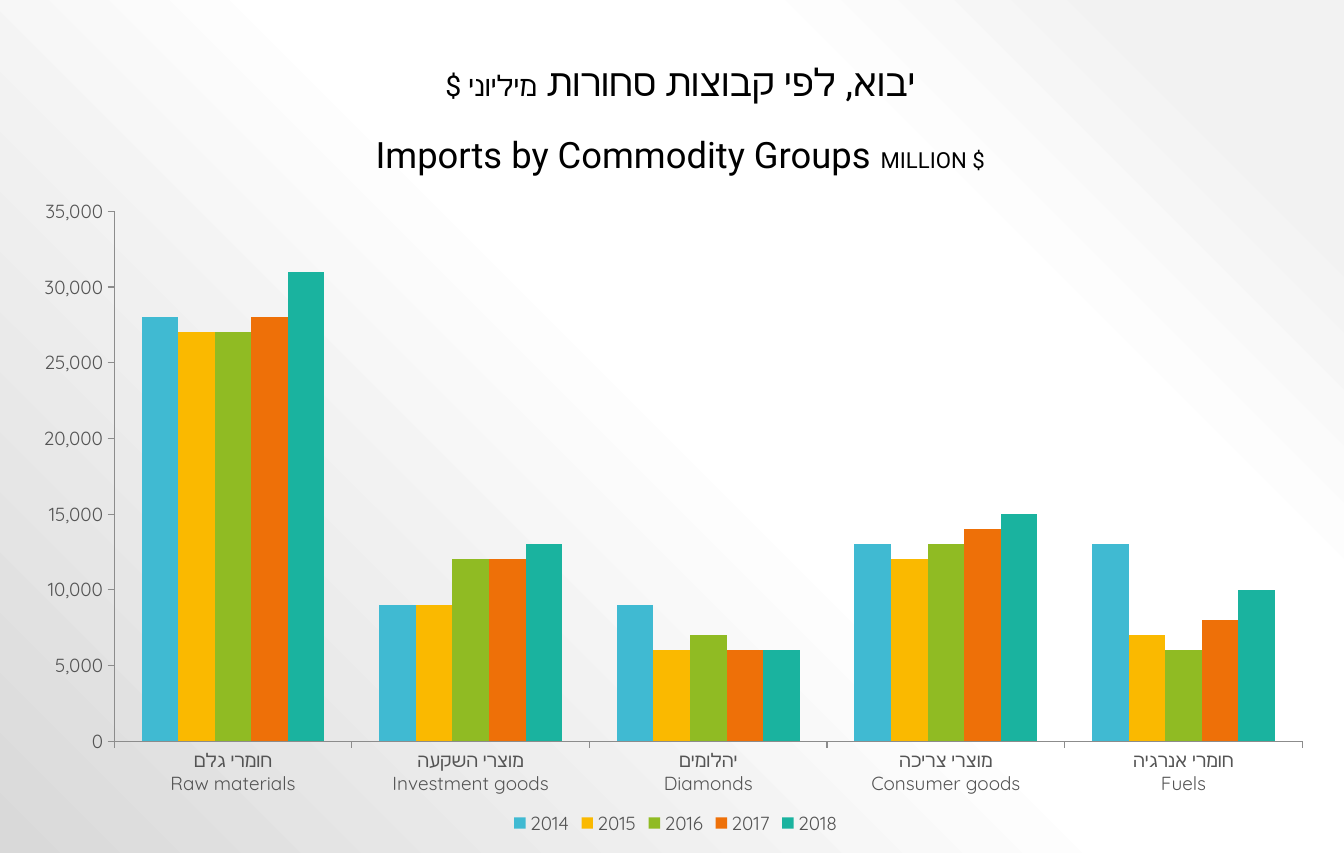
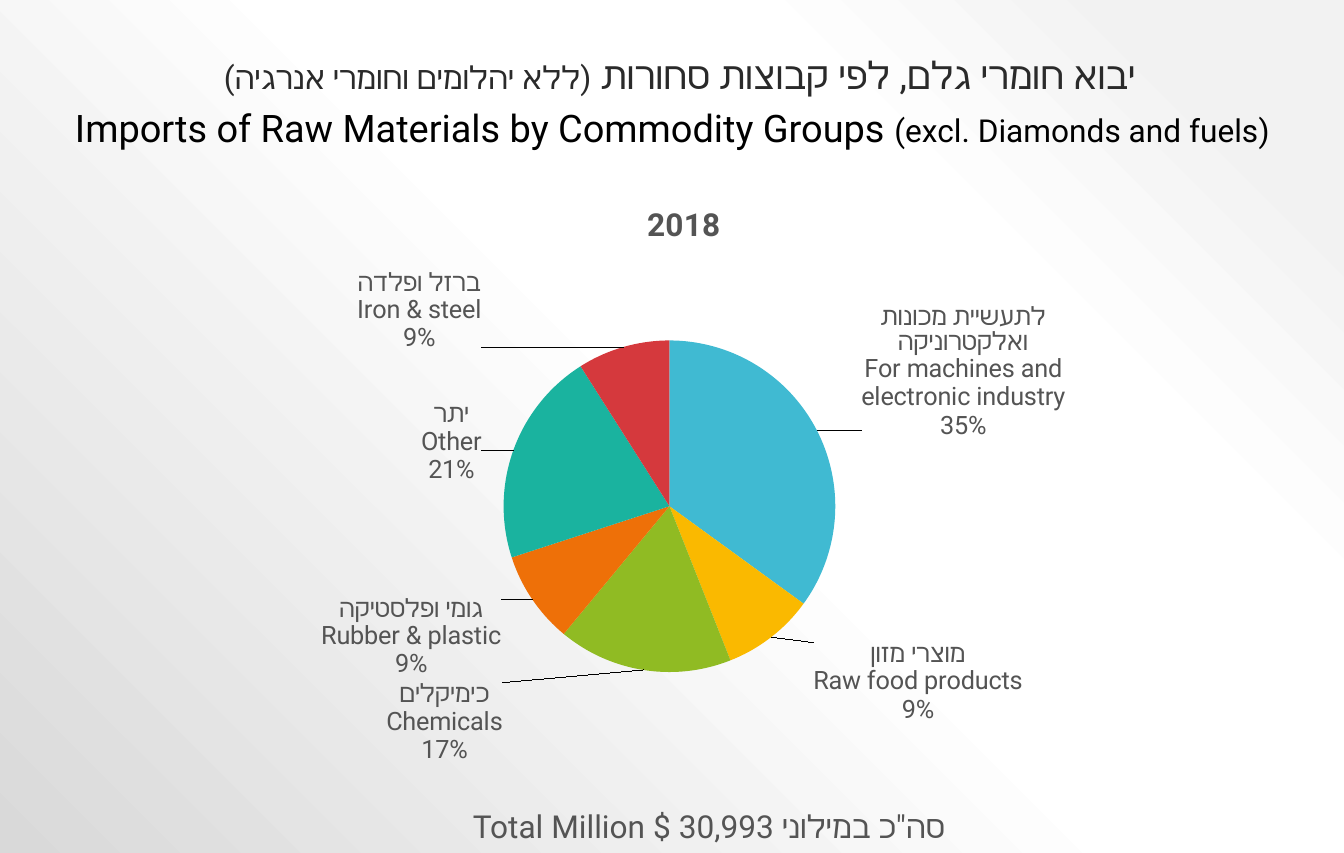
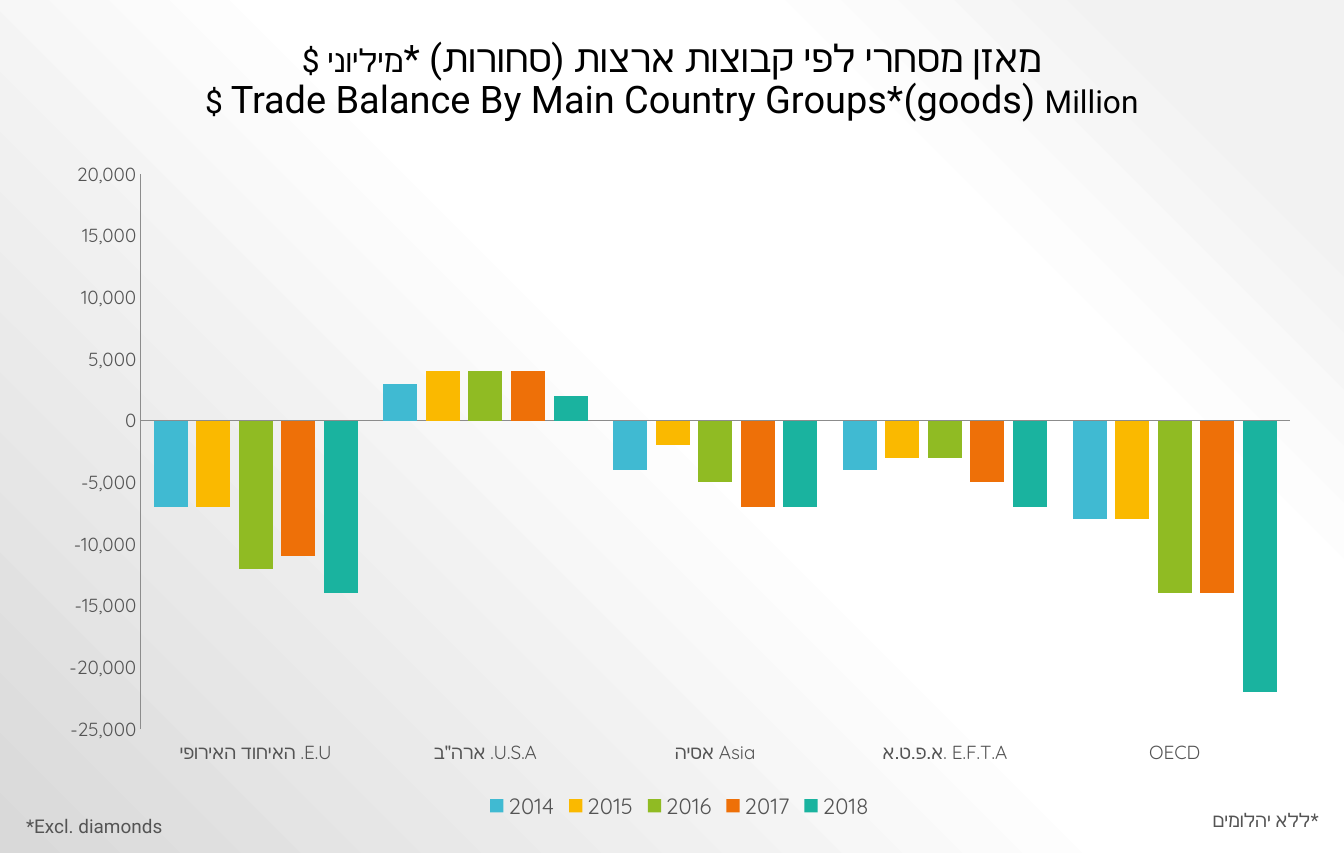
from dataclasses import dataclass

from pptx import Presentation
from pptx.chart.data import CategoryChartData
from pptx.dml.color import RGBColor
from pptx.enum.chart import XL_CHART_TYPE, XL_LEGEND_POSITION, XL_TICK_LABEL_POSITION, XL_TICK_MARK
from pptx.enum.text import MSO_ANCHOR, PP_ALIGN
from pptx.oxml import parse_xml
from pptx.oxml.ns import nsdecls, qn
from pptx.util import Pt


@dataclass(frozen=True)
class Theme:
    text_font: str = "Roboto"
    chart_font: str = "Quicksand"
    black: str = "000000"
    dark: str = "2A2A2A"
    gray: str = "545454"
    axis: str = "8C8C8C"
    accents: tuple = ("40BAD2", "FAB900", "90BB23", "EE7008", "1AB39F", "D5393D")
    background: tuple = ((10, "F2F2F2"), (28, "FFFFFF"), (48, "FFFFFF"), (100, "D9D9D9"))
    heading: int = 24
    subheading: int = 20
    label: int = 16
    small: int = 12


THEME = Theme()
SLIDE_WIDTH, SLIDE_HEIGHT = 850.5, 540
LINE_BREAK = "\v"

# Content: boxes are (left, top, width, height) in points, runs are (text, size)
YEARS = ("2014", "2015", "2016", "2017", "2018")

IMPORTS = {
    "title": [("יבוא, לפי קבוצות סחורות ", THEME.heading), ("מיליוני $", 18)],
    "title_box": (41, 9.4, 779, 60.5),
    "subtitle": [("Imports by Commodity Groups ", 23), ("MILLION $", 14)],
    "subtitle_box": (144, 83.5, 573, 33),
    "chart_box": (23, 111.6, 809.3, 419.8),
    "plot": (0.061, 0.053, 0.929, 0.799),
    "categories": ["חומרי גלם\nRaw materials", "מוצרי השקעה\nInvestment goods",
                   "יהלומים\nDiamonds", "מוצרי צריכה\nConsumer goods",
                   "חומרי אנרגיה\nFuels"],
    "values": [(28000, 9000, 9000, 13000, 13000), (27000, 9000, 6000, 12000, 7000),
               (27000, 12000, 7000, 13000, 6000), (28000, 12000, 6000, 14000, 8000),
               (31000, 13000, 6000, 15000, 10000)],
    "range": (0, 35000), "gap": 150, "overlap": 0,
    "tick": XL_TICK_MARK.OUTSIDE, "legend_size": THEME.small,
    "label_position": XL_TICK_LABEL_POSITION.NEXT_TO_AXIS,
}

RAW_MATERIALS = {
    "title": [("יבוא חומרי גלם, לפי קבוצות סחורות ", THEME.heading),
              ("(ללא יהלומים וחומרי אנרגיה)", THEME.subheading)],
    "title_box": (47.5, 26, 765.4, 39.6),
    "subtitle": [("Imports of Raw Materials by Commodity Groups ", THEME.heading),
                 ("(excl. Diamonds and fuels)", THEME.subheading)],
    "subtitle_box": (11.5, 62.6, 828, 36),
    "total": [("Total Million $ סה\"כ במילוני 30,993", THEME.subheading)],
    "total_box": (266.4, 507.6, 364.3, 31.7),
    "chart_box": (28, 105.8, 804.2, 385.2),
    "plot": (0.36, 0.285, 0.264, 0.545),
    "chart_title": "2018",
    "title_place": (0.47, 0.05),
    # category, percent, label shift as fractions of the chart
    "slices": [
        ("לתעשיית מכונות ואלקטרוניקה\nFor machines and electronic industry", 35, (0.03, 0.02)),
        ("מוצרי מזון\nRaw food products", 9, (0.03, 0)),
        ("כימיקלים\nChemicals", 17, (-0.11, 0.01)),
        ("גומי ופלסטיקה\nRubber & plastic", 9, (-0.02, -0.01)),
        ("יתר\nOther", 21, (-0.02, 0.06)),
        ("ברזל ופלדה\nIron & steel", 9, (-0.11, 0.02)),
    ],
}

BALANCE = {
    "title": [("מאזן מסחרי לפי קבוצות ארצות (סחורות) *", THEME.heading),
              ("מיליוני $", THEME.subheading), (LINE_BREAK, 0),
              ("Trade Balance By Main Country Groups*(goods) ", THEME.heading),
              ("Million $", THEME.subheading)],
    "title_box": (18, 15, 814.3, 65.5),
    "chart_box": (28, 94.3, 804.2, 427.7),
    "plot": (0.076, 0.037, 0.904, 0.822),
    "categories": ["האיחוד האירופי .E.U", "ארה\"ב .U.S.A", "אסיה Asia",
                   "א.פ.ט.א. E.F.T.A", "OECD"],
    "values": [(-7000, 3000, -4000, -4000, -8000), (-7000, 4000, -2000, -3000, -8000),
               (-12000, 4000, -5000, -3000, -14000), (-11000, 4000, -7000, -5000, -14000),
               (-14000, 2000, -7000, -7000, -22000)],
    "range": (-25000, 20000), "gap": 75, "overlap": -25,
    "tick": XL_TICK_MARK.NONE, "legend_size": 14,
    "label_position": XL_TICK_LABEL_POSITION.LOW,
    "notes": [("*Excl. diamonds", (9.4, 512, 123.8, 21.6), PP_ALIGN.LEFT),
              ("ללא יהלומים*", (714.2, 508.3, 127.4, 21.6), PP_ALIGN.RIGHT)],
}


# Shared helpers
def points(box):
    return [Pt(length) for length in box]


def style_font(font, size, color=THEME.gray, name=THEME.text_font):
    font.size = Pt(size)
    font.name = name
    font.color.rgb = RGBColor.from_string(color)


def add_text(page, box, runs, color=THEME.black, align=PP_ALIGN.CENTER, spacing=1.0):
    shape = page.shapes.add_textbox(*points(box))
    shape.text_frame.word_wrap = True
    para = shape.text_frame.paragraphs[0]
    para.alignment = align
    para.line_spacing = spacing
    for text, size in runs:
        if text == LINE_BREAK:
            para.add_line_break()
            continue
        span = para.add_run()
        span.text = text
        style_font(span.font, size, color)
        span.font._element.append(
            parse_xml(f'<a:cs {nsdecls("a")} typeface="{THEME.text_font}"/>'))
    return shape


def add_title(page, content, color=THEME.black):
    shape = add_text(page, content["title_box"], content["title"], color, spacing=0.9)
    shape.text_frame.vertical_anchor = MSO_ANCHOR.BOTTOM
    shape.text_frame.paragraphs[0]._p.get_or_add_pPr().set("rtl", "1")


def layout_xml(values, modes=""):
    parts = "".join(f'<c:{key} val="{value}"/>' for key, value in zip("xywh", values))
    return f'<c:layout {nsdecls("c")}><c:manualLayout>{modes}{parts}</c:manualLayout></c:layout>'


def place(element, values, index, target=""):
    for old in element.findall(qn("c:layout")):
        element.remove(old)
    modes = target + '<c:xMode val="edge"/><c:yMode val="edge"/>'
    element.insert(index, parse_xml(layout_xml(values, modes)))


def add_chart(page, content, kind, categories, series, font):
    data = CategoryChartData(number_format="#,##0")
    data.categories = categories
    for name, values in series:
        data.add_series(name, values)
    chart = page.shapes.add_chart(kind, *points(content["chart_box"]), data).chart
    style_font(chart.font, THEME.label, name=font)
    plot_area = chart._chartSpace.chart.plotArea
    place(plot_area, content["plot"], 0, '<c:layoutTarget val="inner"/>')
    return chart


def fill_solid(item, color):
    item.format.fill.solid()
    item.format.fill.fore_color.rgb = RGBColor.from_string(color)


def add_columns(page, content):
    chart = add_chart(page, content, XL_CHART_TYPE.COLUMN_CLUSTERED, content["categories"],
                      zip(YEARS, content["values"]), THEME.chart_font)
    chart.has_title = False
    plot = chart.plots[0]
    plot.vary_by_categories = False
    plot.gap_width, plot.overlap = content["gap"], content["overlap"]
    for series, color in zip(plot.series, THEME.accents):
        series.invert_if_negative = False
        fill_solid(series, color)

    for axis in (chart.category_axis, chart.value_axis):
        axis.has_major_gridlines = False
        axis.major_tick_mark = content["tick"]
        axis.minor_tick_mark = XL_TICK_MARK.NONE
        axis.format.line.color.rgb = RGBColor.from_string(THEME.axis)
        axis.format.line.width = Pt(0.75)
        style_font(axis.tick_labels.font, THEME.small, name=THEME.chart_font)
    chart.category_axis.tick_label_position = content["label_position"]
    value_axis = chart.value_axis
    value_axis.minimum_scale, value_axis.maximum_scale = content["range"]
    value_axis.major_unit = 5000
    value_axis.tick_labels.number_format = "#,##0"
    value_axis.tick_labels.number_format_is_linked = False

    chart.has_legend = True
    chart.legend.position = XL_LEGEND_POSITION.BOTTOM
    chart.legend.include_in_layout = False
    style_font(chart.legend.font, content["legend_size"], name=THEME.chart_font)


def pie_labels_xml(shifts):
    """Category and percent labels, each moved from its usual place."""
    text = (f'<c:txPr><a:bodyPr/><a:p><a:pPr><a:defRPr sz="{THEME.label * 100}">'
            f'<a:solidFill><a:srgbClr val="{THEME.gray}"/></a:solidFill>'
            f'<a:latin typeface="{THEME.text_font}"/></a:defRPr></a:pPr>'
            '<a:endParaRPr lang="en-US"/></a:p></c:txPr>')
    flags = (("LegendKey", 0), ("Val", 0), ("CatName", 1), ("SerName", 0),
             ("Percent", 1), ("BubbleSize", 0))
    shown = "".join(f'<c:show{name} val="{value}"/>' for name, value in flags)
    body = ('<c:numFmt formatCode="0%" sourceLinked="0"/><c:spPr><a:noFill/></c:spPr>'
            f'{text}<c:dLblPos val="outEnd"/>{shown}<c:separator>\n</c:separator>')
    labels = "".join(f'<c:dLbl><c:idx val="{index}"/>{layout_xml(shift)}{body}</c:dLbl>'
                     for index, shift in enumerate(shifts))
    return (f'<c:dLbls {nsdecls("c", "a")}>{labels}{body}'
            '<c:showLeaderLines val="1"/></c:dLbls>')


def add_pie(page, content):
    names, shares, shifts = zip(*content["slices"])
    chart = add_chart(page, content, XL_CHART_TYPE.PIE, names,
                      [(content["chart_title"], shares)], THEME.text_font)
    chart.has_legend = False
    chart.has_title = True
    title = chart.chart_title
    title.text_frame.text = content["chart_title"]
    title_font = title.text_frame.paragraphs[0].runs[0].font
    style_font(title_font, THEME.subheading)
    title_font.bold = True
    title.include_in_layout = False
    place(title._element, content["title_place"], 1)

    chart.plots[0].vary_by_categories = True
    series = chart.plots[0].series[0]
    for index, color in enumerate(THEME.accents):
        fill_solid(series.points[index], color)
    series._element.find(qn("c:cat")).addprevious(parse_xml(pie_labels_xml(shifts)))


def set_background(master):
    """Radial gradient centred on the top right corner."""
    master.background.fill.solid()
    solid = master.element.xpath(".//p:bgPr/a:solidFill")[0]
    stops = "".join(f'<a:gs pos="{stop * 1000}"><a:srgbClr val="{color}"/></a:gs>'
                    for stop, color in THEME.background)
    gradient = parse_xml(
        f'<a:gradFill {nsdecls("a")} rotWithShape="1"><a:gsLst>{stops}</a:gsLst>'
        '<a:path path="circle"><a:fillToRect l="100000" b="100000"/></a:path></a:gradFill>')
    solid.getparent().replace(solid, gradient)


# Slides
def build_imports(page):
    add_title(page, IMPORTS)
    add_columns(page, IMPORTS)
    add_text(page, IMPORTS["subtitle_box"], IMPORTS["subtitle"], spacing=0.9)


def build_raw_materials(page):
    add_title(page, RAW_MATERIALS, THEME.dark)
    add_pie(page, RAW_MATERIALS)
    add_text(page, RAW_MATERIALS["subtitle_box"], RAW_MATERIALS["subtitle"])
    add_text(page, RAW_MATERIALS["total_box"], RAW_MATERIALS["total"], THEME.gray)


def build_balance(page):
    add_title(page, BALANCE)
    add_columns(page, BALANCE)
    for text, box, align in BALANCE["notes"]:
        add_text(page, box, [(text, THEME.small)], THEME.gray, align)


def main():
    deck = Presentation()
    deck.slide_width, deck.slide_height = Pt(SLIDE_WIDTH), Pt(SLIDE_HEIGHT)
    set_background(deck.slide_master)
    for build in (build_imports, build_raw_materials, build_balance):
        build(deck.slides.add_slide(deck.slide_layouts[6]))
    deck.save("out.pptx")


if __name__ == "__main__":
    main()
